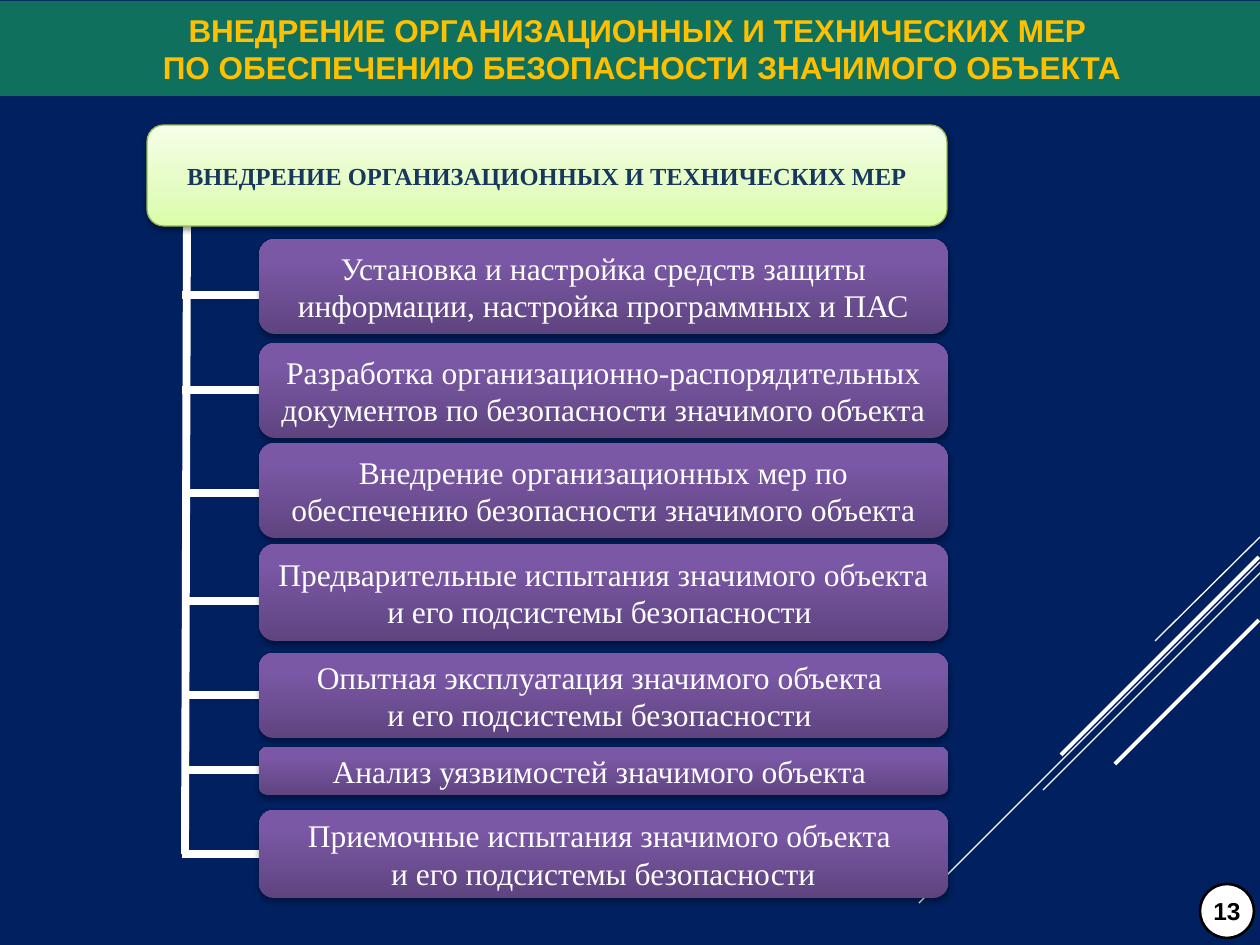
from copy import deepcopy
from dataclasses import dataclass

from lxml import etree
from pptx import Presentation
from pptx.dml.color import RGBColor
from pptx.enum.shapes import MSO_CONNECTOR, MSO_SHAPE
from pptx.enum.text import MSO_ANCHOR, MSO_AUTO_SIZE, PP_ALIGN
from pptx.oxml.ns import qn
from pptx.util import Emu, Pt

STRAIGHT = MSO_CONNECTOR.STRAIGHT
ROUNDED, STAR = MSO_SHAPE.ROUNDED_RECTANGLE, MSO_SHAPE.STAR_16_POINT
MIDDLE, CENTER = MSO_ANCHOR.MIDDLE, PP_ALIGN.CENTER

TITLE = [
    "ВНЕДРЕНИЕ ОРГАНИЗАЦИОННЫХ И ТЕХНИЧЕСКИХ МЕР ",
    "ПО ОБЕСПЕЧЕНИЮ БЕЗОПАСНОСТИ ЗНАЧИМОГО ОБЪЕКТА",
]
ROOT = "ВНЕДРЕНИЕ ОРГАНИЗАЦИОННЫХ И ТЕХНИЧЕСКИХ МЕР"
PAGE = "13"
# top, height, branch height on the spine, paragraphs
MEASURES = [
    (239, 95, 295, ["Установка и настройка средств защиты информации, настройка программных и ПАС"]),
    (343, 95, 390, ["Разработка организационно-распорядительных документов по безопасности значимого объекта"]),
    (443, 95, 493, ["Внедрение организационных мер по обеспечению безопасности значимого объекта"]),
    (544, 97, 601, ["Предварительные испытания значимого объекта и его подсистемы безопасности "]),
    (653, 85, 695, ["Опытная эксплуатация значимого объекта ", "и его подсистемы безопасности "]),
    (747, 48, 770, ["Анализ уязвимостей значимого объекта "]),
    (810, 88, 854, ["Приемочные испытания значимого объекта ", "и его подсистемы безопасности"]),
]
RAYS = [
    (1260, 537, 1155, 641, 0.75),
    (1260, 562, 919, 903, 0.75),
    (1260, 573, 1043, 790, 0.75),
    (1259, 557, 1061, 755, 2.25),
    (1259, 620, 1115, 764, 2.25),
]
SPINE_X, SPINE_HALF = 186, 4
CARD_X, CARD_WIDTH = 259, 689


@dataclass(frozen=True)
class Theme:
    background: str = "002060"
    band: str = "0F705D"
    title: str = "FFC000"
    white: str = "FFFFFF"
    black: str = "000000"
    root_text: str = "17375E"
    root_edge: str = "98B955"
    root_fill: tuple = ((0, "DAFDA7"), (0.35, "E4FCC2"), (1, "F5FFE7"))
    card_fill: tuple = ((0, "5F4480"), (0.8, "7B58A6"), (1, "7C57A8"))
    sans: str = "Arial"
    serif: str = "Times New Roman"
    large: int = 18
    small: int = 14
    tree_line: float = 4.5


THEME = Theme()


def px(value):
    return Emu(round(value * 914400 / 126))


def rgb(color):
    return RGBColor.from_string(color)


def add_run(paragraph, text, size, font, color, bold=False):
    run = paragraph.add_run()
    run.text = text
    run.font.size, run.font.name, run.font.bold = Pt(size), font, bold
    run.font.color.rgb = rgb(color)


def write(shape, lines, *style):
    frame = shape.text_frame
    frame.word_wrap, frame.vertical_anchor = True, MIDDLE
    for index, line in enumerate(lines):
        paragraph = frame.add_paragraph() if index else frame.paragraphs[0]
        paragraph.alignment = CENTER
        add_run(paragraph, line, *style)


def add_line(slide, x1, y1, x2, y2, width):
    line = slide.shapes.add_connector(STRAIGHT, px(x1), px(y1), px(x2), px(y2))
    line.line.color.rgb = rgb(THEME.white)
    line.line.width = Pt(width)
    etree.SubElement(line._element.spPr, qn("a:effectLst"))


def add_box(slide, kind, x, y, width, height):
    box = slide.shapes.add_shape(kind, px(x), px(y), px(width), px(height))
    box.shadow.inherit = False
    box.line.fill.background()
    return box


def shade(box, stops, shadow_alpha, shadow_distance):
    box.fill.gradient()
    box.fill.gradient_angle = 90
    properties = box._element.spPr
    stop_list = properties.find(".//" + qn("a:gsLst"))
    stop_list.append(deepcopy(stop_list[-1]))
    for stop, (position, color) in zip(box.fill.gradient_stops, stops):
        stop.position = position
        stop.color.rgb = rgb(color)
    shadow = etree.SubElement(
        properties.find(qn("a:effectLst")), qn("a:outerShdw"),
        blurRad=str(Pt(3.1)), dist=str(Pt(shadow_distance)), dir="5400000", rotWithShape="0",
    )
    tint = etree.SubElement(shadow, qn("a:srgbClr"), val=THEME.black)
    etree.SubElement(tint, qn("a:alpha"), val=str(shadow_alpha * 1000))


def add_title(slide):
    title = slide.shapes.title
    title.left, title.top, title.width, title.height = px(0), px(1), px(1260), px(95)
    title.fill.solid()
    title.fill.fore_color.rgb = rgb(THEME.band)
    frame = title.text_frame
    frame.auto_size = MSO_AUTO_SIZE.NONE
    frame.margin_left = frame.margin_right = frame.margin_top = frame.margin_bottom = px(6)
    style = (THEME.large, THEME.sans, THEME.title, True)
    write(title, TITLE[:1], *style)
    paragraph = frame.paragraphs[0]
    paragraph.add_line_break()
    add_run(paragraph, TITLE[1], *style)
    paragraph._p.get_or_add_pPr().set("marL", str(px(24)))


def add_tree(slide):
    add_line(slide, SPINE_X + 1, 226, SPINE_X - 1, MEASURES[-1][2], THEME.tree_line)
    root = add_box(slide, ROUNDED, 147, 125, 800, 101)
    shade(root, THEME.root_fill, 38, 1.6)
    root.line.color.rgb = rgb(THEME.root_edge)
    root.line.width = Pt(0.75)
    write(root, [ROOT], THEME.small, THEME.serif, THEME.root_text, True)
    for top, height, branch, lines in MEASURES:
        add_line(slide, SPINE_X - SPINE_HALF, branch, CARD_X, branch, THEME.tree_line)
        card = add_box(slide, ROUNDED, CARD_X, top, CARD_WIDTH, height)
        shade(card, THEME.card_fill, 35, 1.8)
        write(card, lines, THEME.large, THEME.serif, THEME.white)


def add_page_badge(slide):
    badge = add_box(slide, STAR, 1200, 884, 54, 54)
    badge.adjustments[0] = 0.5
    badge.fill.solid()
    badge.fill.fore_color.rgb = rgb(THEME.white)
    badge.line.color.rgb = rgb(THEME.black)
    badge.line.width = Pt(1.5)
    write(badge, [PAGE], THEME.small, THEME.sans, THEME.black, True)
    badge.text_frame.word_wrap = False


def main():
    deck = Presentation()
    deck.slide_width, deck.slide_height = px(1260), px(945)
    slide = deck.slides.add_slide(deck.slide_layouts.get_by_name("Title Only"))
    slide.background.fill.solid()
    slide.background.fill.fore_color.rgb = rgb(THEME.background)
    add_title(slide)
    for ray in RAYS:
        add_line(slide, *ray)
    add_tree(slide)
    add_page_badge(slide)
    deck.save("out.pptx")


if __name__ == "__main__":
    main()
